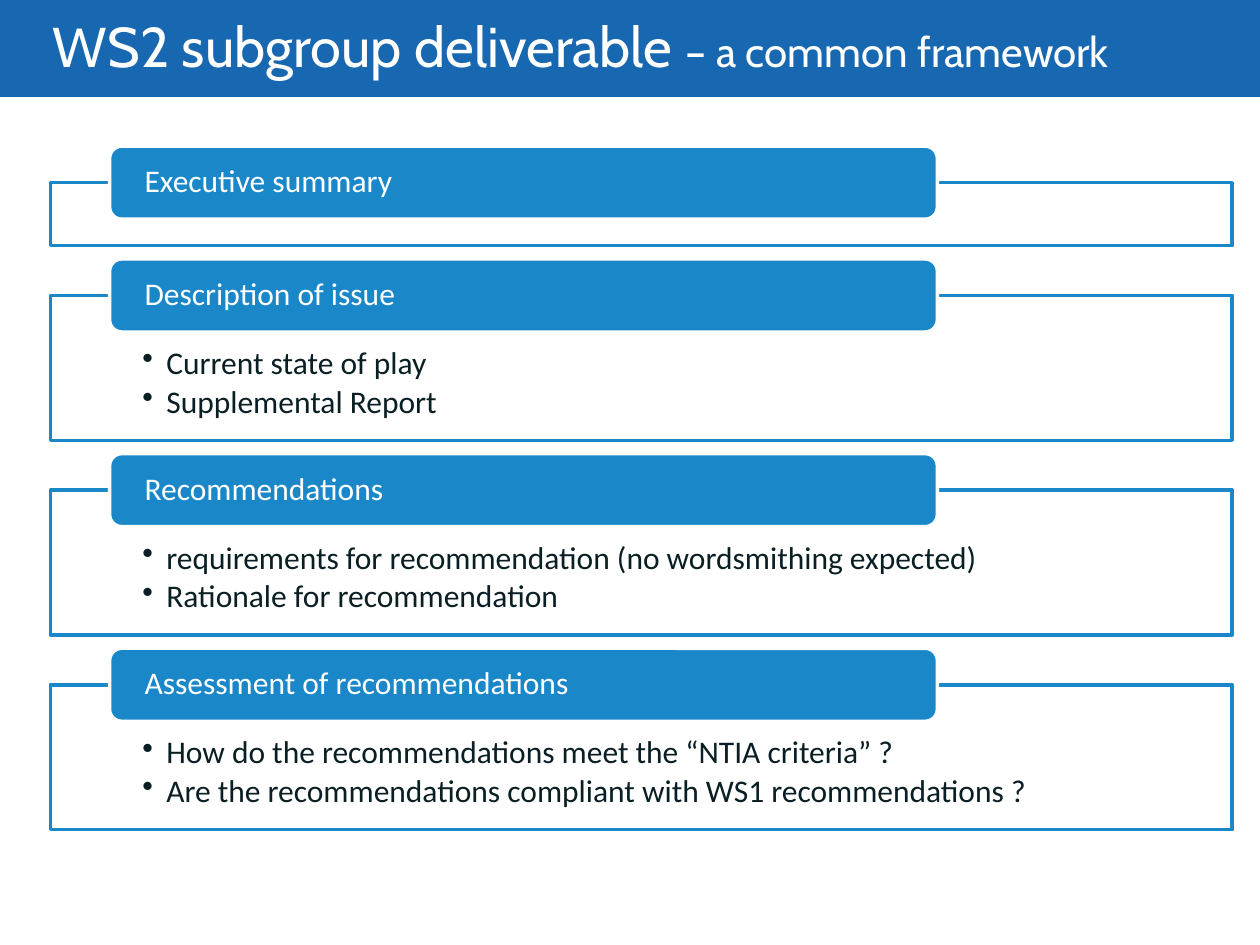
"""Build a slide of four titled sections that outline a common framework."""
from dataclasses import dataclass
from typing import Any

from lxml.etree import SubElement
from pptx import Presentation
from pptx.dml.color import RGBColor
from pptx.enum.shapes import MSO_SHAPE
from pptx.enum.text import MSO_ANCHOR, PP_ALIGN
from pptx.oxml.ns import qn
from pptx.util import Inches, Pt

COLS, ROWS = 100, 75
WIDE, HIGH = Inches(10), Inches(7.5)
HEX = {"band": "1768B1", "tab": "1A87C9", "ink": "0A1F24", "white": "FFFFFF"}
TAB_ROWS, RISE, GAP, TOP = 5.8, 2.9, 1.05, 11.6


@dataclass
class Box:
    left: float
    top: float
    width: float
    height: float


@dataclass
class Part:
    head: str
    items: tuple[str, ...]
    rows: float


PARTS = (
    Part("Executive summary", (), 5),
    Part("Description of issue", ("Current state of play", "Supplemental Report"), 11.5),
    Part("Recommendations",
         ("requirements for recommendation (no wordsmithing expected)",
          "Rationale for recommendation"), 11.5),
    Part("Assessment of recommendations",
         ("How do the recommendations meet the “NTIA criteria” ?",
          "Are the recommendations compliant with WS1 recommendations ?"), 11.5),
)


def cols(n: float) -> int:
    return round(WIDE * n / COLS)


def rows(n: float) -> int:
    return round(HIGH * n / ROWS)


def tint(name: str) -> RGBColor:
    return RGBColor.from_string(HEX[name])


def apply(obj: Any, form: dict[str, Any]) -> None:
    for key, val in form.items():
        setattr(obj, key, val)


def place(box: Box) -> dict[str, int]:
    return {"left": cols(box.left), "top": rows(box.top),
            "width": cols(box.width), "height": rows(box.height)}


def inset(frame: Any, left: float, top: float, right: float, low: float) -> None:
    apply(frame, {"margin_left": cols(left), "margin_top": rows(top),
                  "margin_right": cols(right), "margin_bottom": rows(low),
                  "word_wrap": True})


def style(font: Any, face: str, size: float, color: str) -> None:
    apply(font, {"name": face, "size": Pt(size)})
    font.color.rgb = tint(color)


def block(slide: Any, kind: MSO_SHAPE, box: Box, fill: str, edge: str) -> Any:
    shape = slide.shapes.add_shape(kind, **place(box))
    shape.shadow.inherit = False
    shape.fill.solid()
    shape.fill.fore_color.rgb = tint(fill)
    shape.line.color.rgb = tint(edge)
    shape.line.width = Pt(2)
    return shape


def write(para: Any, text: str, color: str, after: float) -> None:
    para.text = text
    apply(para, {"alignment": PP_ALIGN.LEFT, "line_spacing": 0.9,
                 "space_after": Pt(after)})
    style(para.font, "Calibri", 18, color)


def bullet(para: Any) -> None:
    props = para._p.get_or_add_pPr()
    props.set("marL", str(cols(1.9)))
    props.set("indent", str(-cols(1.9)))
    SubElement(props, qn("a:buChar")).set("char", "•")


def panel(slide: Any, part: Part, top: float) -> None:
    box = Box(4, top, 93.8, part.rows)
    shape = block(slide, MSO_SHAPE.RECTANGLE, box, "white", "tab")
    color = shape.fill._xPr.find(".//" + qn("a:srgbClr"))
    SubElement(color, qn("a:alpha")).set("val", "90000")
    frame = shape.text_frame
    inset(frame, 7.3, 4.1, 7.3, 1.4)
    frame.vertical_anchor = MSO_ANCHOR.TOP
    for i, item in enumerate(part.items):
        para = frame.add_paragraph() if i else frame.paragraphs[0]
        bullet(para)
        write(para, item, "ink", 2.7)


def tab(slide: Any, head: str, top: float) -> None:
    box = Box(8.7, top, 65.7, TAB_ROWS)
    shape = block(slide, MSO_SHAPE.ROUNDED_RECTANGLE, box, "tab", "white")
    frame = shape.text_frame
    inset(frame, 2.5, 0, 2.5, 0)
    frame.vertical_anchor = MSO_ANCHOR.MIDDLE
    write(frame.paragraphs[0], head, "white", 0)


def banner(slide: Any) -> None:
    title = slide.shapes.title
    apply(title, place(Box(0, -0.1, 100, 7.8)))
    title.fill.solid()
    title.fill.fore_color.rgb = tint("band")
    frame = title.text_frame
    inset(frame, 4.2, 0, 1, 0.6)
    frame.vertical_anchor = MSO_ANCHOR.MIDDLE
    para = frame.paragraphs[0]
    apply(para, {"alignment": PP_ALIGN.LEFT, "line_spacing": Pt(39.8)})
    for text, size in (("WS2 subgroup deliverable ", 32), ("– a common framework", 24)):
        run = para.add_run()
        run.text = text
        style(run.font, "Cabin", size, "white")


def main() -> None:
    deck = Presentation()
    apply(deck, {"slide_width": WIDE, "slide_height": HIGH})
    slide = deck.slides.add_slide(deck.slide_layouts[5])
    banner(slide)
    top = TOP
    for part in PARTS:
        panel(slide, part, top + RISE)
        tab(slide, part.head, top)
        top += RISE + part.rows + GAP
    deck.save("out.pptx")


if __name__ == "__main__":
    main()
